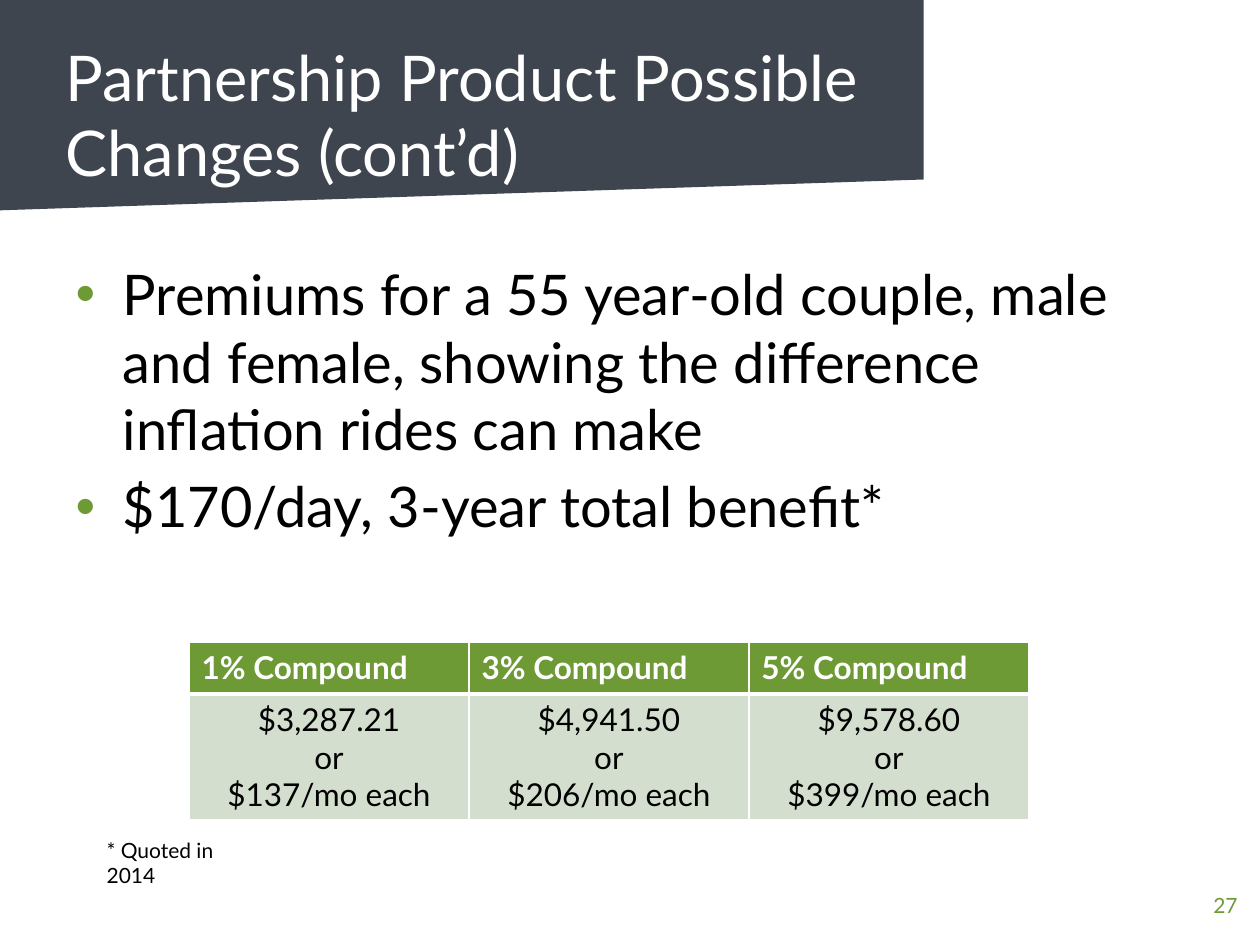
from pptx import Presentation
from pptx.dml.color import RGBColor
from pptx.enum.shapes import MSO_SHAPE as Kind
from pptx.enum.text import MSO_ANCHOR as Anchor, MSO_AUTO_SIZE as Fit, PP_ALIGN as Align
from pptx.oxml.ns import qn
from pptx.util import Cm, Pt
from lxml.etree import SubElement as Sub

WHITE, BLACK = "FFFFFF", "000000"
SLATE, GREEN, PALE = "3E454F", "6D9A35", "D4DECE"


def tint(code):
    return RGBColor.from_string(code)


class Deck:
    font = "Lato"

    def __init__(self):
        self.prs = Presentation()
        self.prs.slide_width, self.prs.slide_height = Cm(25.4), Cm(19.05)
        self.slide = self.prs.slides.add_slide(self.prs.slide_layouts[1])
        self.tree = self.slide.shapes._spTree

    def style(self, para, size, color, bold=False, align=Align.LEFT):
        para.alignment = align
        font = para.font
        font.name, font.size, font.bold = self.font, Pt(size), bold
        font.color.rgb = tint(color)

    def panel(self, kind, box, color, turn=0):
        shape = self.slide.shapes.add_shape(kind, *map(Cm, box))
        shape.rotation = turn
        shape.shadow.inherit = False
        shape.fill.solid()
        shape.fill.fore_color.rgb = tint(color)
        shape.line.fill.background()

    def place(self, holder, box):
        """Size a placeholder and bring it in front of the panels."""
        holder.left, holder.top, holder.width, holder.height = map(Cm, box)
        self.tree.append(holder._element)
        frame = holder.text_frame
        frame.auto_size = Fit.NONE
        frame.vertical_anchor = Anchor.TOP
        return frame

    def title(self, text, box):
        frame = self.place(self.slide.shapes.title, box)
        frame.text = text
        self.style(frame.paragraphs[0], 36, WHITE)

    def bullets(self, lines, box):
        frame = self.place(self.slide.placeholders[1], box)
        frame.text = "\n".join(lines)
        for i, para in enumerate(frame.paragraphs):
            para.space_before = Pt(6 if i else 0)
            props = para._p.get_or_add_pPr()
            props.set("marL", str(Cm(0.95)))
            props.set("indent", str(Cm(-0.95)))
            Sub(Sub(props, qn("a:buClr")), qn("a:srgbClr"), val=GREEN)
            Sub(props, qn("a:buChar"), char="•")
            self.style(para, 32, BLACK)

    def note(self, text, box, color):
        frame = self.slide.shapes.add_textbox(*map(Cm, box)).text_frame
        frame.word_wrap = True
        frame.text = text
        self.style(frame.paragraphs[0], 12, color)

    def cell(self, cell, text, fill, edges, **look):
        props = cell._tc.get_or_add_tcPr()
        for side, width in zip("LRTB", edges):
            line = Sub(props, qn(f"a:ln{side}"), w=str(Pt(width)))
            Sub(Sub(line, qn("a:solidFill")), qn("a:srgbClr"), val=WHITE)
        cell.fill.solid()
        cell.fill.fore_color.rgb = tint(fill)
        cell.text = text
        for para in cell.text_frame.paragraphs:
            self.style(para, 18, **look)

    def table(self, heads, values, box, rows):
        table = self.slide.shapes.add_table(2, len(heads), *map(Cm, box)).table
        for row, tall in zip(table.rows, rows):
            row.height = Cm(tall)
        for i, (head, value) in enumerate(zip(heads, values)):
            self.cell(table.cell(0, i), head, GREEN, (1, 1, 1, 3), color=WHITE, bold=True)
            self.cell(table.cell(1, i), value, PALE, (1, 1, 3, 1), color=BLACK,
                      align=Align.CENTER)


def main():
    deck = Deck()

    # Slanted banner, cut off by a white block on the right
    deck.panel(Kind.FLOWCHART_MANUAL_INPUT, (0, 0, 25.4, 4.24), SLATE, 180)
    deck.panel(Kind.RECTANGLE, (18.62, 0, 6.78, 3.81), WHITE)

    # Title and list
    deck.title("Partnership Product Possible Changes (cont’d)", (1.07, 0.64, 18.44, 3.73))
    deck.bullets([
        "Premiums for a 55 year-old couple, male and female, "
        "showing the difference inflation rides can make",
        "$170/day, 3-year total benefit*",
    ], (1.27, 5.11, 22.86, 11.91))

    # Page number
    deck.note("27", (24.21, 17.86, 1.4, 1.4), GREEN)

    # Premium table
    rates = (1, 3, 5)
    costs = (("3,287.21", 137), ("4,941.50", 206), ("9,578.60", 399))
    deck.table([f"{rate}% Compound" for rate in rates],
               [f"${year}\nor\n${month}/mo each" for year, month in costs],
               (3.81, 12.95, 16.93, 3.58), (1.04, 2.54))

    # Footnote
    deck.note("* Quoted in 2014", (1.9, 16.76, 3.68, 0.76), BLACK)

    deck.prs.save("out.pptx")


if __name__ == "__main__":
    main()
